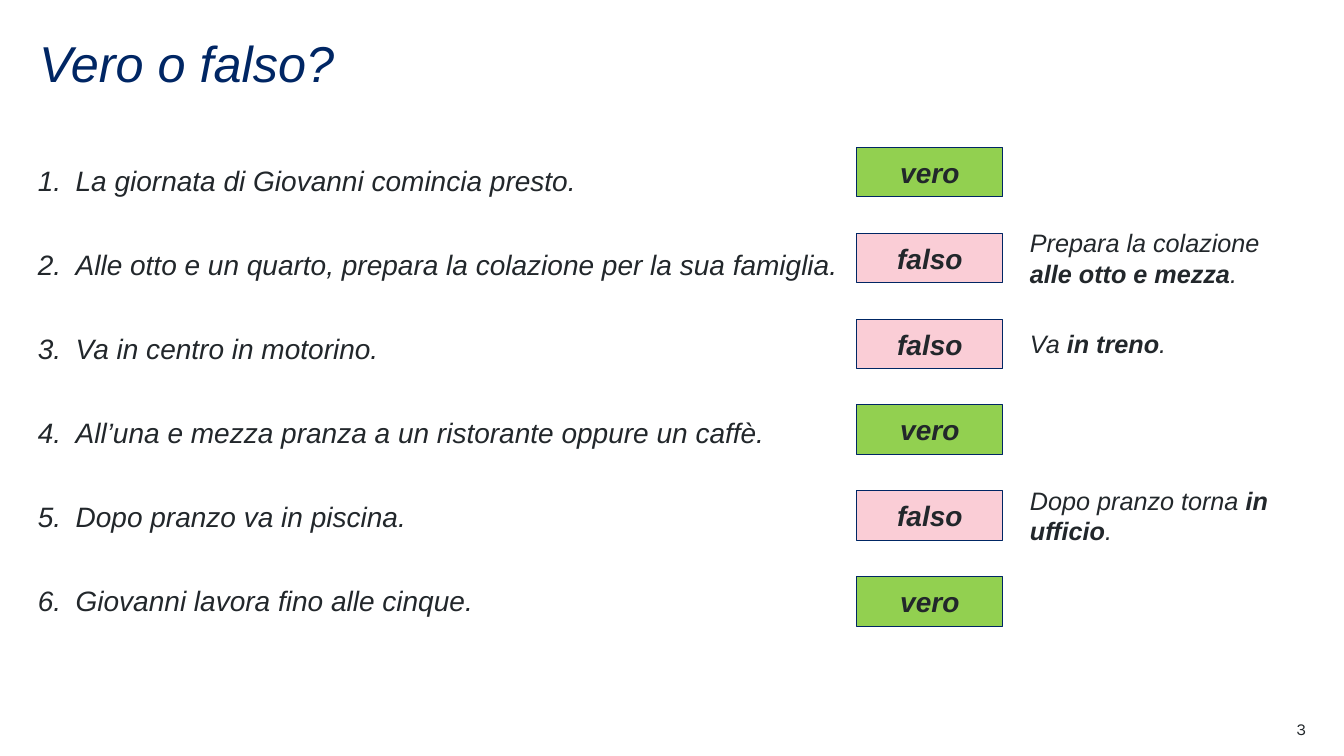
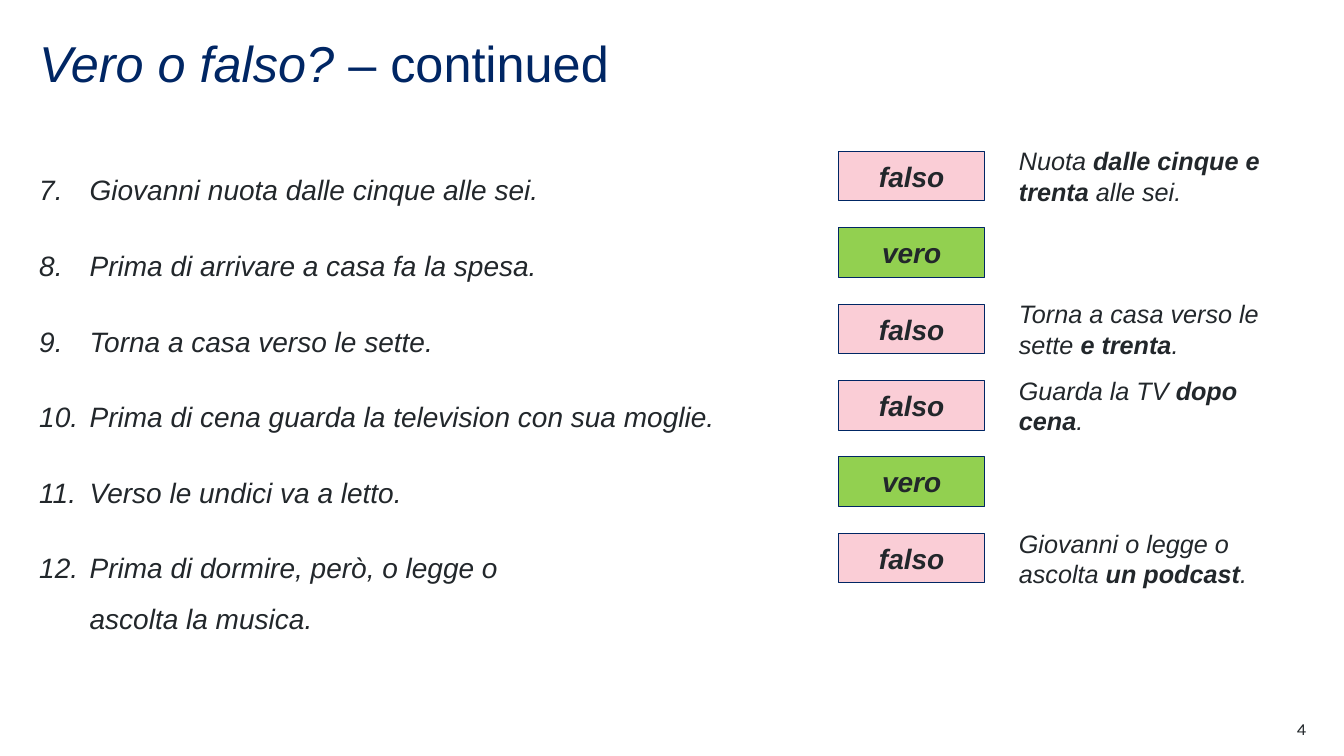
from copy import deepcopy

from lxml import etree
from pptx import Presentation
from pptx.dml.color import RGBColor
from pptx.enum.shapes import MSO_SHAPE
from pptx.enum.text import MSO_ANCHOR, MSO_AUTO_SIZE, PP_ALIGN
from pptx.oxml.ns import qn
from pptx.util import Pt

RECTANGLE = MSO_SHAPE.RECTANGLE
TOP, MIDDLE = MSO_ANCHOR.TOP, MSO_ANCHOR.MIDDLE
LEFT, CENTER, RIGHT = PP_ALIGN.LEFT, PP_ALIGN.CENTER, PP_ALIGN.RIGHT
NO_FIT = MSO_AUTO_SIZE.NONE

# Shared style
NAVY, INK = "002664", "22272B"
ANSWER_FILLS = {"vero": "92D050", "falso": "FACDD6"}
TEXT_FONT, NUMBER_FONT = "Arial", "Karla"

# Shared geometry in points: left, top, width, height
PAGE_SIZE = (960, 540)
TITLE_BOX = (28, 28, 904, 43.2)
NUMBER_BOX = (876, 513.5, 57, 14.4)
ANSWER_WIDTH, ANSWER_HEIGHT = 104.4, 35.4
NOTE_WIDTH, NOTE_HEIGHT = 203, 51

# Each row: statement, answer, correction as (text, bold) runs
FIRST_ROWS = [
    ("La giornata di Giovanni comincia presto.", "vero", []),
    ("Alle otto e un quarto, prepara la colazione per la sua famiglia.", "falso",
     [("Prepara la colazione ", False), ("alle otto e mezza", True), (".", False)]),
    ("Va in centro in motorino.", "falso",
     [("Va ", False), ("in treno", True), (".", False)]),
    ("All’una e mezza pranza a un ristorante oppure un caffè.", "vero", []),
    ("Dopo pranzo va in piscina.", "falso",
     [("Dopo pranzo torna ", False), ("in ufficio", True), (".", False)]),
    ("Giovanni lavora fino alle cinque.", "vero", []),
]
SECOND_ROWS = [
    ("Giovanni nuota dalle cinque alle sei.", "falso",
     [("Nuota ", False), ("dalle cinque e trenta ", True), ("alle sei.", False)]),
    ("Prima di arrivare a casa fa la spesa.", "vero", []),
    ("Torna a casa verso le sette.", "falso",
     [("Torna a casa verso le sette ", False), ("e trenta", True), (".", False)]),
    ("Prima di cena guarda la television con sua moglie.", "falso",
     [("Guarda la TV ", False), ("dopo cena", True), (".", False)]),
    ("Verso le undici va a letto.", "vero", []),
    ("Prima di dormire, però, o legge o \nascolta la musica.", "falso",
     [("Giovanni o legge o \nascolta ", False), ("un podcast", True), (".", False)]),
]


def color(hex_string):
    return RGBColor.from_string(hex_string)


def add_span(para, text, size, ink=INK, bold=False, italic=True, font=TEXT_FONT):
    """Add a run; a newline becomes a line break in the same style."""
    for index, line in enumerate(text.split("\n")):
        if index:
            para.add_line_break()
            para._p[-1].insert(0, deepcopy(span._r.rPr))
        span = para.add_run()
        span.text = line
        span.font.name = font
        span.font.size = Pt(size)
        span.font.bold = bold
        span.font.italic = italic
        span.font.color.rgb = color(ink)


def place(shape, box):
    shape.left, shape.top, shape.width, shape.height = map(Pt, box)


def prepare_frame(shape, anchor=TOP, side_inset=0, align=LEFT):
    """Set up the text frame and return its first paragraph."""
    frame = shape.text_frame
    frame.word_wrap = True
    frame.auto_size = NO_FIT
    frame.vertical_anchor = anchor
    frame.margin_left = frame.margin_right = Pt(side_inset)
    frame.margin_top = frame.margin_bottom = Pt(0)
    para = frame.paragraphs[0]
    para.alignment = align
    return para


def number_paragraph(para, indent, start):
    properties = para._p.get_or_add_pPr()
    properties.set("marL", str(Pt(indent)))
    properties.set("indent", str(-Pt(indent)))
    numbering = etree.SubElement(properties, qn("a:buAutoNum"), type="arabicPeriod")
    if start > 1:
        numbering.set("startAt", str(start))


def add_title(page, spans):
    title = page.shapes.title
    place(title, TITLE_BOX)
    para = prepare_frame(title)
    para.line_spacing = 0.9
    for text, italic in spans:
        add_span(para, text, 36, NAVY, italic=italic)


def add_statements(page, box, statements, start, indent, space_after):
    body = page.placeholders[1]
    place(body, box)
    para = prepare_frame(body)
    for index, statement in enumerate(statements):
        if index:
            para = body.text_frame.add_paragraph()
        number_paragraph(para, indent, start)
        para.line_spacing = 1.5
        para.space_before = Pt(12 if index else 0)
        para.space_after = Pt(space_after)
        add_span(para, statement, 20)


def add_answer(page, left, top, answer):
    badge = page.shapes.add_shape(
        RECTANGLE, Pt(left), Pt(top), Pt(ANSWER_WIDTH), Pt(ANSWER_HEIGHT))
    badge.shadow.inherit = False
    badge.fill.solid()
    badge.fill.fore_color.rgb = color(ANSWER_FILLS[answer])
    badge.line.color.rgb = color(NAVY)
    badge.line.width = Pt(0.75)
    add_span(prepare_frame(badge, MIDDLE, align=CENTER), answer, 20, bold=True)


def add_note(page, left, middle, spans):
    note = page.shapes.add_textbox(
        Pt(left), Pt(middle - NOTE_HEIGHT / 2), Pt(NOTE_WIDTH), Pt(NOTE_HEIGHT))
    para = prepare_frame(note, MIDDLE, side_inset=7.2)
    for text, bold in spans:
        add_span(para, text, 18, bold=bold)


def add_answers(page, left, top, step, note_left, rows):
    """Stack the answers at equal steps, each with its centred correction."""
    for index, (_, answer, note_spans) in enumerate(rows):
        row_top = top + index * step
        add_answer(page, left, row_top, answer)
        if note_spans:
            add_note(page, note_left, row_top + ANSWER_HEIGHT / 2, note_spans)


def add_page_number(page, number):
    para = prepare_frame(page.shapes.add_textbox(*map(Pt, NUMBER_BOX)), align=RIGHT)
    add_span(para, str(number), 12, italic=False, font=NUMBER_FONT)


def add_quiz_page(deck, number, title_spans, rows, list_style, answer_style):
    page = deck.slides.add_slide(deck.slide_layouts[1])
    add_title(page, title_spans)
    add_statements(page, statements=[row[0] for row in rows], **list_style)
    add_answers(page, rows=rows, **answer_style)
    add_page_number(page, number)


def main():
    deck = Presentation()
    deck.slide_width, deck.slide_height = map(Pt, PAGE_SIZE)
    add_quiz_page(
        deck, 3, [("Vero o falso?", True)], FIRST_ROWS,
        dict(box=(27, 105, 572.4, 379), start=1, indent=27, space_after=12),
        dict(left=612, top=105.3, step=61.3, note_left=728.6))
    add_quiz_page(
        deck, 4, [("Vero o falso? ", True), ("– continued", False)], SECOND_ROWS,
        dict(box=(28, 111.5, 528, 379), start=7, indent=36, space_after=6),
        dict(left=599, top=108, step=54.6, note_left=720.7))
    deck.save("out.pptx")


if __name__ == "__main__":
    main()
